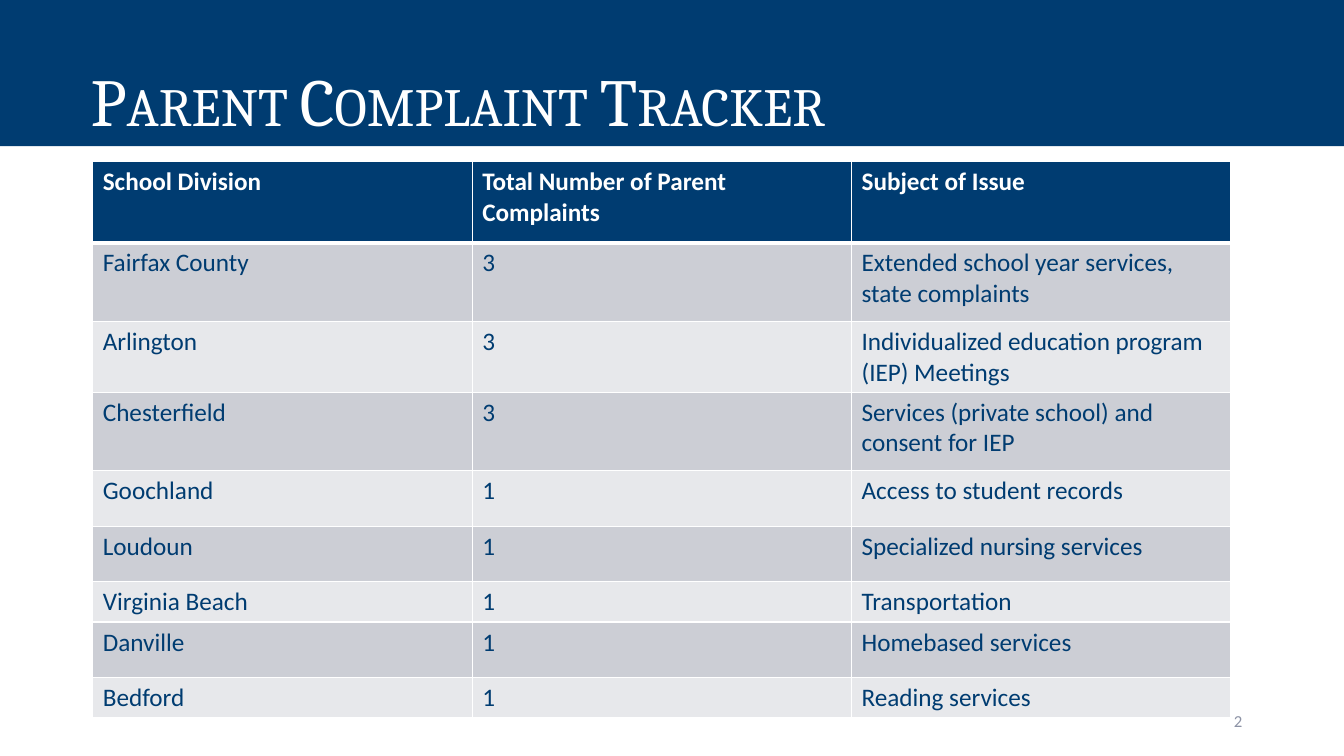
from dataclasses import dataclass

from lxml.etree import SubElement
from pptx import Presentation
from pptx.dml.color import RGBColor as Rgb
from pptx.enum.text import MSO_ANCHOR as Anchor, MSO_AUTO_SIZE as Fit, PP_ALIGN as Align
from pptx.oxml.ns import qn
from pptx.util import Inches, Pt


@dataclass(frozen=True)
class Theme:
    navy: str = "003C71"
    white: str = "FFFFFF"
    gray: str = "8C92A5"
    bands: tuple = ("CCCED5", "E7E8EB")
    serif: str = "Cambria"
    sans: str = "Calibri"
    title: int = 48
    body: int = 18
    small: int = 12
    thin: int = 1
    thick: int = 3


THEME = Theme()

HEADS = ("School Division", "Total Number of Parent Complaints", "Subject of Issue")
CASES = (
    ("Fairfax County", 3, "Extended school year services, state complaints"),
    ("Arlington", 3, "Individualized education program (IEP) Meetings"),
    ("Chesterfield", 3, "Services (private school) and consent for IEP"),
    ("Goochland", 1, "Access to student records"),
    ("Loudoun", 1, "Specialized nursing services"),
    ("Virginia Beach", 1, "Transportation"),
    ("Danville", 1, "Homebased services"),
    ("Bedford", 1, "Reading services"),
)
ROWS = (0.81, 0.78, 0.56, 0.78, 0.55, 0.55, 0.33, 0.55, 0.33)


def apply(item, **values):
    for name, value in values.items():
        setattr(item, name, value)


def paint(item, color):
    item.fill.solid()
    item.fill.fore_color.rgb = Rgb.from_string(color)


def write(frame, text, font, size, color, bold=False, align=Align.LEFT):
    par = frame.paragraphs[0]
    par.alignment = align
    run = par.add_run()
    run.text = text
    apply(run.font, name=font, size=Pt(size), bold=bold)
    run.font.color.rgb = Rgb.from_string(color)
    return run


def edge(cell, side, width):
    """Draw one white border; borders must precede the cell's fill."""
    line = SubElement(cell._tc.get_or_add_tcPr(), qn(f"a:ln{side}"), w=str(Pt(width)))
    fill = SubElement(line, qn("a:solidFill"))
    SubElement(fill, qn("a:srgbClr"), val=THEME.white)


def add_title(slide, box, text):
    title = slide.shapes.title
    apply(title, **dict(zip(("left", "top", "width", "height"), map(Inches, box))))
    paint(title, THEME.navy)
    frame = title.text_frame
    apply(frame, word_wrap=True, auto_size=Fit.NONE, vertical_anchor=Anchor.BOTTOM,
          margin_left=Inches(0.9), margin_right=Inches(0.1),
          margin_top=Inches(0.05), margin_bottom=Inches(0.05))
    run = write(frame, text, THEME.serif, THEME.title, THEME.white)
    run.font._element.set("cap", "small")
    frame.paragraphs[0].line_spacing = 0.9


def add_number(slide, box, text):
    frame = slide.shapes.add_textbox(*map(Inches, box)).text_frame
    apply(frame, word_wrap=True, vertical_anchor=Anchor.MIDDLE)
    write(frame, text, THEME.sans, THEME.small, THEME.gray, align=Align.RIGHT)


def add_cases(slide, box):
    data = (HEADS, *CASES)
    table = slide.shapes.add_table(len(data), len(HEADS), *map(Inches, box)).table
    for col in table.columns:
        col.width = Inches(box[2] / len(HEADS))
    for y, (values, height) in enumerate(zip(data, ROWS)):
        table.rows[y].height = Inches(height)
        head = y == 0
        # The rule under the header is heavier than the rest
        top = THEME.thick if y == 1 else THEME.thin
        bottom = THEME.thick if head else THEME.thin
        for x, value in enumerate(values):
            cell = table.cell(y, x)
            for side, width in zip("LRTB", (THEME.thin, THEME.thin, top, bottom)):
                edge(cell, side, width)
            paint(cell, THEME.navy if head else THEME.bands[(y - 1) % 2])
            write(cell.text_frame, str(value), THEME.sans, THEME.body,
                  THEME.white if head else THEME.navy, bold=head)


def main():
    deck = Presentation()
    apply(deck, slide_width=Inches(13.33), slide_height=Inches(7.5))
    slide = deck.slides.add_slide(deck.slide_layouts.get_by_name("Title Only"))
    # Title band, page number, complaint table
    add_title(slide, (0, 0, 13.33, 1.45), "Parent Complaint Tracker")
    add_number(slide, (9.42, 6.95, 3, 0.4), "2")
    add_cases(slide, (0.92, 1.6, 11.29, sum(ROWS)))
    deck.save("out.pptx")


if __name__ == "__main__":
    main()
